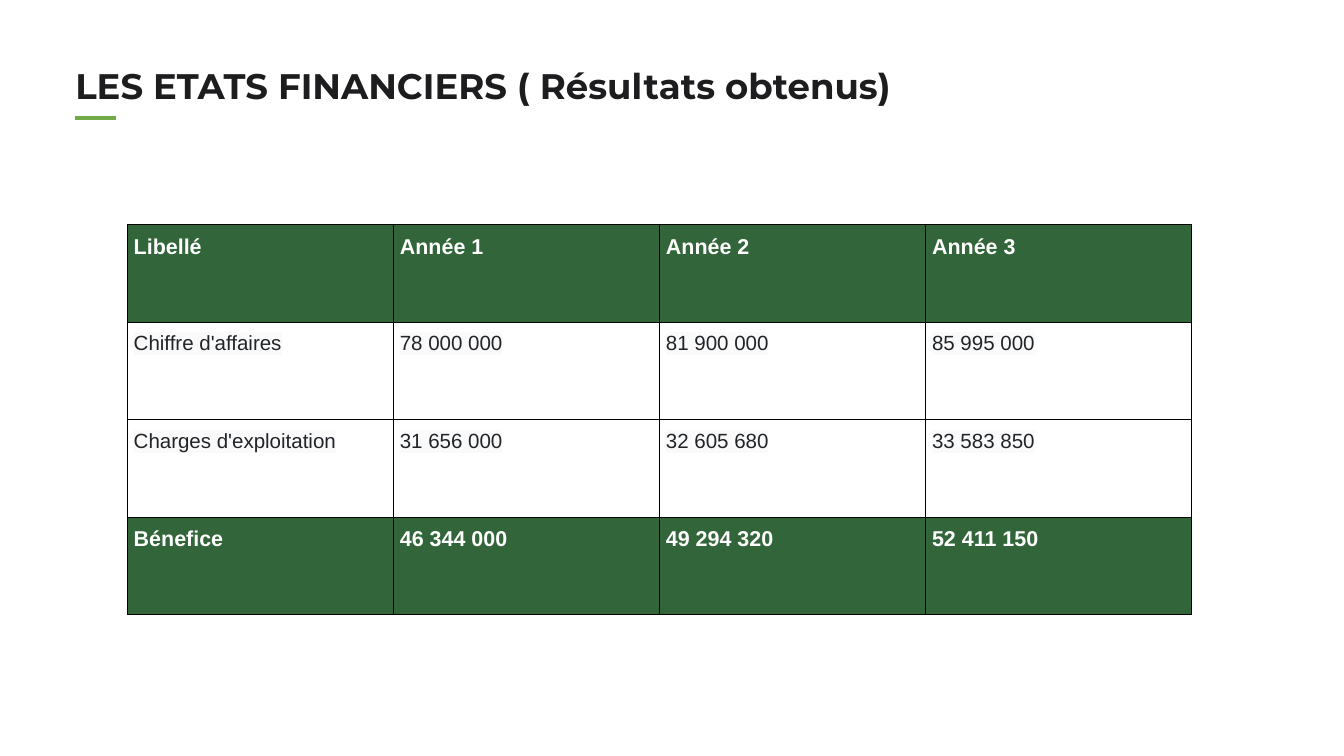
from dataclasses import dataclass

from lxml.etree import SubElement
from pptx import Presentation
from pptx.dml.color import RGBColor
from pptx.enum.shapes import MSO_CONNECTOR
from pptx.enum.text import MSO_AUTO_SIZE
from pptx.oxml.ns import qn
from pptx.slide import Slide
from pptx.table import _Cell
from pptx.text.text import _Paragraph
from pptx.util import Inches, Pt

WIDTH, HEIGHT = Inches(20), Inches(11.25)
INK = RGBColor(0x1D, 0x1D, 0x1F)
BODY = RGBColor(0x21, 0x25, 0x29)
WHITE = RGBColor(0xFF, 0xFF, 0xFF)
PALE = RGBColor(0xFA, 0xFA, 0xFA)
GREEN = RGBColor(0x32, 0x65, 0x3A)
LIME = RGBColor(0x71, 0xAA, 0x48)
BLACK = RGBColor(0x00, 0x00, 0x00)


@dataclass(frozen=True)
class TextStyle:
    font: str
    size: float
    color: RGBColor
    bold: bool
    spacing: float
    highlight: RGBColor | None = None


@dataclass(frozen=True)
class Row:
    cells: tuple[str, ...]
    style: TextStyle
    fill: RGBColor | None = None


TITLE = TextStyle("Montserrat", 38, INK, True, 1.1)
STRONG = TextStyle("Arial", 23, WHITE, True, 1.15, GREEN)
PLAIN = TextStyle("Arial", 22, BODY, False, 1.15, PALE)

ROWS = (
    Row(("Libellé", "Année 1", "Année 2", "Année 3"), STRONG, GREEN),
    Row(("Chiffre d'affaires", "78 000 000", "81 900 000", "85 995 000"), PLAIN),
    Row(("Charges d'exploitation", "31 656 000", "32 605 680", "33 583 850"), PLAIN),
    Row(("Bénefice", "46 344 000", "49 294 320", "52 411 150"), STRONG, GREEN),
)


def x(percent: float) -> int:
    return round(WIDTH * percent / 100)


def y(percent: float) -> int:
    return round(HEIGHT * percent / 100)


def add_run(p: _Paragraph, text: str, style: TextStyle) -> None:
    p.line_spacing = style.spacing
    r = p.add_run()
    r.text = text
    r.font.size = Pt(style.size)
    r.font.bold = style.bold
    r.font.color.rgb = style.color
    if style.highlight is not None:
        highlight = SubElement(r.font._element, qn("a:highlight"))
        SubElement(highlight, qn("a:srgbClr"), val=str(style.highlight))
    r.font.name = style.font


def add_title(s: Slide, text: str) -> None:
    sp = s.shapes.add_textbox(x(5.6), y(7.91), x(91.45), y(5.69))
    tf = sp.text_frame
    tf.word_wrap = True
    tf.auto_size = MSO_AUTO_SIZE.SHAPE_TO_FIT_TEXT
    tf.margin_left = tf.margin_right = tf.margin_top = tf.margin_bottom = 0
    add_run(tf.paragraphs[0], text, TITLE)


def add_rule(s: Slide) -> None:
    line = s.shapes.add_connector(
        MSO_CONNECTOR.STRAIGHT, x(5.6), y(15.64), x(8.65), y(15.64)
    )
    line.line.color.rgb = LIME
    line.line.width = Pt(3.75)
    SubElement(line._element.spPr, qn("a:effectLst"))


def add_borders(cell: _Cell) -> None:
    tcPr = cell._tc.get_or_add_tcPr()
    for side in ("lnL", "lnR", "lnT", "lnB"):
        ln = SubElement(tcPr, qn(f"a:{side}"), w=str(Pt(0.75)))
        fill = SubElement(ln, qn("a:solidFill"))
        SubElement(fill, qn("a:srgbClr"), val=str(BLACK))


def fill_cell(cell: _Cell, text: str, row: Row) -> None:
    cell.margin_left = cell.margin_right = Inches(0.1)
    cell.margin_top = cell.margin_bottom = Inches(0.1)
    add_borders(cell)
    if row.fill is None:
        cell.fill.background()
    else:
        cell.fill.solid()
        cell.fill.fore_color.rgb = row.fill
    add_run(cell.text_frame.paragraphs[0], text, row.style)


def add_results(s: Slide, rows: tuple[Row, ...]) -> None:
    table = s.shapes.add_table(
        len(rows), len(rows[0].cells), x(9.45), y(29.7), x(79.2), y(51.6)
    ).table
    table.first_row = table.horz_banding = False
    for i, row in enumerate(rows):
        for j, text in enumerate(row.cells):
            fill_cell(table.cell(i, j), text, row)


def main() -> None:
    prs = Presentation()
    prs.slide_width, prs.slide_height = WIDTH, HEIGHT
    s = prs.slides.add_slide(prs.slide_layouts[6])
    add_rule(s)
    add_title(s, "LES ETATS FINANCIERS ( Résultats obtenus)")
    add_results(s, ROWS)
    prs.save("out.pptx")


if __name__ == "__main__":
    main()
